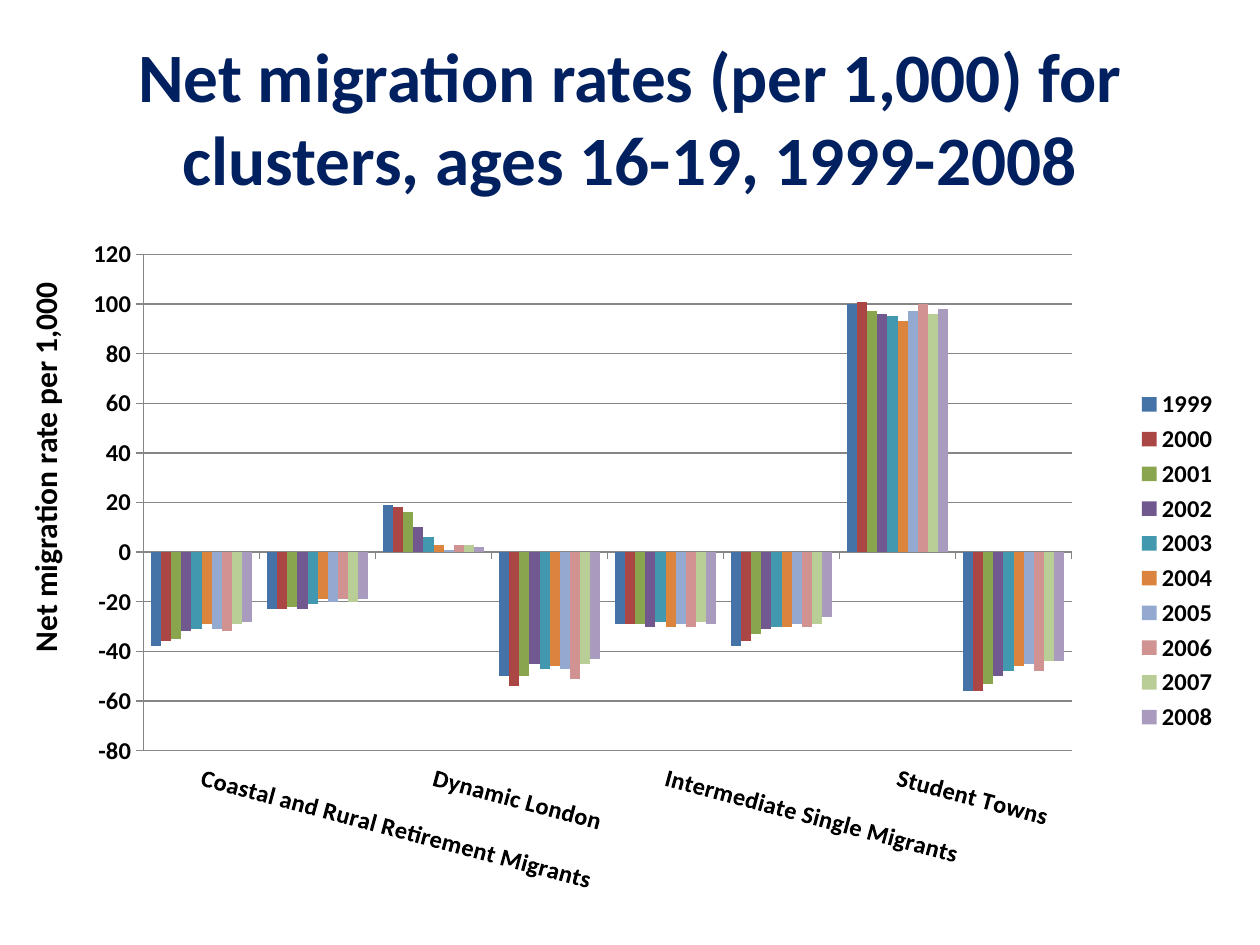
"""Build a slide charting net migration rates by cluster for ages 16-19."""
from lxml.etree import SubElement
from pptx import Presentation
from pptx.chart.data import CategoryChartData
from pptx.dml.color import RGBColor
from pptx.enum.chart import XL_CHART_TYPE, XL_LEGEND_POSITION, XL_TICK_LABEL_POSITION, XL_TICK_MARK
from pptx.enum.text import MSO_ANCHOR, PP_ALIGN
from pptx.oxml.ns import qn
from pptx.util import Inches, Pt

TITLE = "Net migration rates (per 1,000) for clusters, ages 16-19, 1999-2008"
AXIS_TITLE = "Net migration rate per 1,000"
FONT = "Calibri"
GRID_COLOUR = "868686"
CLUSTERS = [
    "Coastal and Rural Retirement Migrants",
    "Constrained, Working-Class, Local Britain",
    "Dynamic London",
    "Footloose, Middle-Class, Commuter Britain",
    "Intermediate Single Migrants",
    "Sedentary Middle-Class Britain",
    "Student Towns",
    "Successful Family In-migrants",
]
RATES = [
    ("1999", "4572A7", (-38, -23, 19, -50, -29, -38, 100, -56)),
    ("2000", "AA4643", (-36, -23, 18, -54, -29, -36, 101, -56)),
    ("2001", "89A54E", (-35, -22, 16, -50, -29, -33, 97, -53)),
    ("2002", "71588F", (-32, -23, 10, -45, -30, -31, 96, -50)),
    ("2003", "4198AF", (-31, -21, 6, -47, -28, -30, 95, -48)),
    ("2004", "DB843D", (-29, -19, 3, -46, -30, -30, 93, -46)),
    ("2005", "93A9CF", (-31, -20, 1, -47, -29, -29, 97, -45)),
    ("2006", "D19392", (-32, -19, 3, -51, -30, -30, 100, -48)),
    ("2007", "B9CD96", (-29, -20, 3, -45, -28, -29, 96, -44)),
    ("2008", "A99BBD", (-28, -19, 2, -43, -29, -26, 98, -44)),
]
PLOT_LAYOUT = [
    ("layoutTarget", "inner"), ("xMode", "edge"), ("yMode", "edge"),
    ("x", "0.072"), ("y", "0.029"), ("w", "0.792"), ("h", "0.763"),
]


def colour(value):
    return RGBColor.from_string(value)


def style_font(font, size, value):
    font.name = FONT
    font.size = Pt(size)
    font.bold = True
    font.color.rgb = colour(value)


def write(frame, text, size, value, align):
    para = frame.paragraphs[0]
    para.alignment = align
    span = para.add_run()
    span.text = text
    style_font(span.font, size, value)


def place_plot(chart):
    plot_area = chart.plots[0]._element.getparent()
    for old in plot_area.findall(qn("c:layout")):
        plot_area.remove(old)
    layout = SubElement(plot_area, qn("c:layout"))
    plot_area.insert(0, layout)
    manual = SubElement(layout, qn("c:manualLayout"))
    for name, value in PLOT_LAYOUT:
        SubElement(manual, qn(f"c:{name}")).set("val", value)


def style_axes(chart):
    values, clusters = chart.value_axis, chart.category_axis
    values.minimum_scale, values.maximum_scale, values.major_unit = -80, 120, 20
    values.has_major_gridlines = True
    values.tick_labels.number_format = "0"
    values.tick_labels.number_format_is_linked = False
    clusters.tick_label_position = XL_TICK_LABEL_POSITION.LOW
    for axis in (values, clusters):
        axis.major_tick_mark = XL_TICK_MARK.OUTSIDE
        style_font(axis.tick_labels.font, 14, "000000")
    for line in (values.format.line, clusters.format.line, values.major_gridlines.format.line):
        line.color.rgb = colour(GRID_COLOUR)
        line.width = Pt(0.75)
    label_body = clusters._element.find(qn("c:txPr")).find(qn("a:bodyPr"))
    label_body.set("rot", str(15 * 60000))


def add_rates_chart(page):
    data = CategoryChartData(number_format="0")
    data.categories = CLUSTERS
    for year, _, rates in RATES:
        data.add_series(year, rates)
    chart = page.shapes.add_chart(
        XL_CHART_TYPE.COLUMN_CLUSTERED,
        Inches(0.47), Inches(1.87), Inches(9.3), Inches(5.23), data,
    ).chart
    style_font(chart.font, 14, "000000")
    chart.has_title = False
    chart.has_legend = True
    chart.legend.position = XL_LEGEND_POSITION.RIGHT
    chart.legend.include_in_layout = False
    style_font(chart.legend.font, 14, "000000")
    plot = chart.plots[0]
    plot.vary_by_categories = False
    plot.gap_width = 150
    plot.overlap = 0
    for series, (_, value, _) in zip(plot.series, RATES):
        series.invert_if_negative = False
        series.format.fill.solid()
        series.format.fill.fore_color.rgb = colour(value)
    style_axes(chart)
    place_plot(chart)


def main():
    deck = Presentation()
    deck.slide_width, deck.slide_height = Inches(10), Inches(7.5)
    page = deck.slides.add_slide(deck.slide_layouts[5])
    title = page.shapes.title
    title.left, title.top = Inches(0.5), Inches(0.3)
    title.width, title.height = Inches(9), Inches(1.25)
    title.text_frame.vertical_anchor = MSO_ANCHOR.MIDDLE
    write(title.text_frame, TITLE, 39.6, "002060", PP_ALIGN.CENTER)
    add_rates_chart(page)
    box = page.shapes.add_textbox(Inches(-1.23), Inches(3.49), Inches(3.17), Inches(0.4))
    box.rotation = 270
    box.text_frame.word_wrap = False
    write(box.text_frame, AXIS_TITLE, 18, "000000", PP_ALIGN.LEFT)
    deck.save("out.pptx")


if __name__ == "__main__":
    main()
